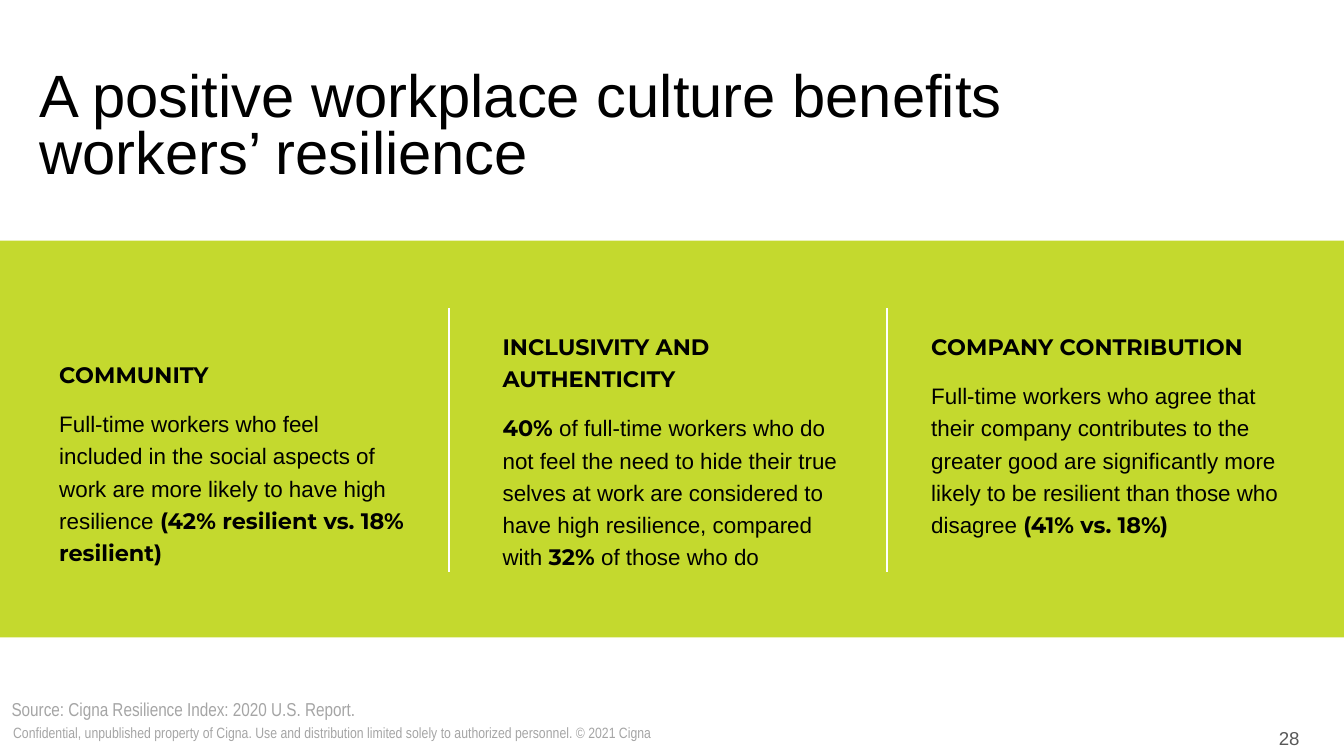
from dataclasses import dataclass

import pptx
import pptx.dml.color
import pptx.enum.shapes
import pptx.enum.text
import pptx.oxml.ns
import pptx.util
from lxml import etree

Cm = pptx.util.Cm
ALIGN = pptx.enum.text.PP_ALIGN
ANCHOR = pptx.enum.text.MSO_ANCHOR

BLACK = "000000"
WHITE = "FFFFFF"
LIME = "C4D92E"
PALE_GREY = "A5A5A5"
DARK_GREY = "595959"

SLIDE_WIDTH, SLIDE_HEIGHT = 25.4, 14.29
COLUMN_WIDTH, COLUMN_HEIGHT = 7.37, 6.38
DIVIDER_TOP, DIVIDER_BOTTOM = 5.82, 10.82


@dataclass
class Phrase:
    text: str
    strong: bool = False


@dataclass
class Benefit:
    left: float
    top: float
    heading: str
    phrases: list[Phrase]


@dataclass
class Label:
    text: str
    left: float
    top: float
    width: float
    height: float
    font: str
    size: float
    color: str
    inset_x: float = 0.25
    inset_y: float = 0.13
    align: ALIGN = ALIGN.LEFT
    anchor: ANCHOR = ANCHOR.TOP
    line_spacing: float = 1.0


BENEFITS = [
    Benefit(0.74, 6.35, "COMMUNITY", [
        Phrase("Full-time workers who feel included in the social aspects of "
               "work are more likely to have high resilience "),
        Phrase("(42% resilient vs. 18% resilient)", True),
    ]),
    Benefit(9.12, 5.82, "INCLUSIVITY AND AUTHENTICITY", [
        Phrase("40% ", True),
        Phrase("of full-time workers who do \nnot feel the need to hide their true "
               "selves at work are considered to have high resilience, compared \nwith "),
        Phrase("32%", True),
        Phrase(" of those who do"),
    ]),
    Benefit(17.22, 5.82, "COMPANY CONTRIBUTION", [
        Phrase("Full-time workers who agree that their company contributes to the "
               "greater good are significantly more likely to be resilient than "
               "those who disagree "),
        Phrase("(41% vs. 18%)", True),
    ]),
]

LABELS = [
    Label("A positive workplace culture benefits \nworkers’ resilience",
          0.74, 1.22, 23.85, 2.44, "Arial", 32, BLACK, inset_x=0, line_spacing=0.8),
    Label("28", 22.02, 13.61, 2.79, 0.69, "Arial", 10, DARK_GREY, align=ALIGN.RIGHT),
    Label("Source: Cigna Resilience Index: 2020 U.S. Report.",
          -0.03, 12.98, 13.44, 0.84, "Arial Narrow", 10, PALE_GREY, anchor=ANCHOR.MIDDLE),
    Label("Confidential, unpublished property of Cigna. Use and distribution limited "
          "solely to authorized personnel. © 2021 Cigna",
          0, 13.51, 13.64, 0.86, "Arial Narrow", 8, PALE_GREY, inset_y=0.25),
]


def rgb(code: str) -> pptx.dml.color.RGBColor:
    return pptx.dml.color.RGBColor.from_string(code)


def style_run(run, font: str, size: float, color: str, bold: bool = False) -> None:
    run.font.name = font
    run.font.size = pptx.util.Pt(size)
    run.font.bold = bold
    run.font.color.rgb = rgb(color)


def style_column_run(run, strong: bool) -> None:
    style_run(run, "Montserrat" if strong else "Arial", 12, BLACK, strong)


def add_frame(slide, left: float, top: float, width: float, height: float,
              inset_x: float, inset_y: float):
    frame = slide.shapes.add_textbox(Cm(left), Cm(top), Cm(width), Cm(height)).text_frame
    frame.word_wrap = True
    frame.margin_left = frame.margin_right = Cm(inset_x)
    frame.margin_top = frame.margin_bottom = Cm(inset_y)
    return frame


def draw_label(slide, label: Label) -> None:
    frame = add_frame(slide, label.left, label.top, label.width, label.height,
                      label.inset_x, label.inset_y)
    frame.vertical_anchor = label.anchor
    paragraph = frame.paragraphs[0]
    paragraph.text = label.text
    paragraph.alignment = label.align
    paragraph.line_spacing = label.line_spacing
    for run in paragraph.runs:
        style_run(run, label.font, label.size, label.color)


def draw_benefit(slide, benefit: Benefit) -> None:
    frame = add_frame(slide, benefit.left, benefit.top, COLUMN_WIDTH, COLUMN_HEIGHT, 0.38, 0.38)
    frame.text = benefit.heading
    heading = frame.paragraphs[0]
    heading.line_spacing = 1.2
    style_column_run(heading.runs[0], True)

    finding = frame.add_paragraph()
    finding.line_spacing = 1.2
    finding.space_before = pptx.util.Pt(9)
    for phrase in benefit.phrases:
        for index, line in enumerate(phrase.text.split("\n")):
            if index:
                finding.add_line_break()
            run = finding.add_run()
            run.text = line
            style_column_run(run, phrase.strong)


def draw_band(slide, top: float, height: float) -> None:
    band = slide.shapes.add_shape(pptx.enum.shapes.MSO_SHAPE.RECTANGLE,
                                  Cm(0), Cm(top), Cm(SLIDE_WIDTH), Cm(height))
    band.shadow.inherit = False
    band.fill.solid()
    band.fill.fore_color.rgb = rgb(LIME)
    band.line.fill.background()


def draw_divider(slide, x: float) -> None:
    divider = slide.shapes.add_connector(pptx.enum.shapes.MSO_CONNECTOR.STRAIGHT,
                                         Cm(x), Cm(DIVIDER_TOP), Cm(x), Cm(DIVIDER_BOTTOM))
    divider.line.color.rgb = rgb(WHITE)
    divider.line.width = pptx.util.Pt(1)
    etree.SubElement(divider._element.spPr, pptx.oxml.ns.qn("a:effectLst"))


def main() -> None:
    deck = pptx.Presentation()
    deck.slide_width, deck.slide_height = Cm(SLIDE_WIDTH), Cm(SLIDE_HEIGHT)
    slide = deck.slides.add_slide(deck.slide_layouts[6])
    draw_band(slide, 4.55, 7.5)
    for label in LABELS:
        draw_label(slide, label)
    for benefit in BENEFITS:
        draw_benefit(slide, benefit)
    for x in (8.48, 16.76):
        draw_divider(slide, x)
    deck.save("out.pptx")


if __name__ == "__main__":
    main()
